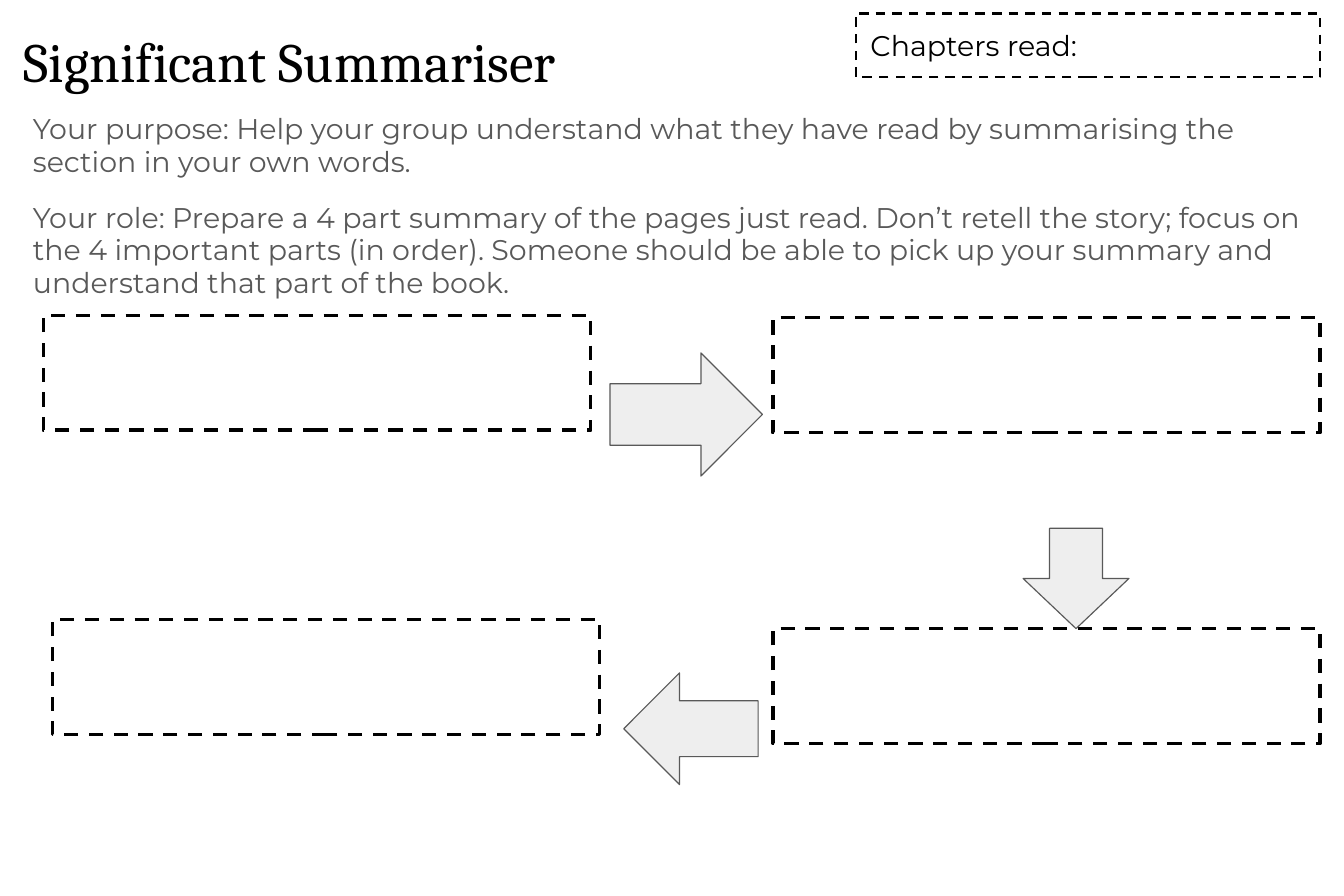
"""Build the Significant Summariser reading-group worksheet."""
from pptx import Presentation
from pptx.dml.color import RGBColor
from pptx.enum.dml import MSO_LINE
from pptx.enum.shapes import MSO_SHAPE as Preset
from pptx.enum.text import MSO_ANCHOR as Anchor, MSO_AUTO_SIZE as AutoSize, PP_ALIGN as Align
from pptx.util import Pt

COLOURS = {"ink": "000000", "grey": "595959", "arrow": "EEEEEE"}
INSET = 9.3
SUMMARY_SIZE = (346.3, 72.7)


def add_outline(preset, left, top, width, height, colour, weight):
    shape = page.shapes.add_shape(preset, Pt(left), Pt(top), Pt(width), Pt(height))
    shape.shadow.inherit = False
    shape.fill.background()
    shape.line.color.rgb = RGBColor.from_string(COLOURS[colour])
    shape.line.width = Pt(weight)
    return shape


def write_text(box, paragraphs, font, size, colour, anchor, spacing=1.0, gap=0):
    frame = box.text_frame
    frame.word_wrap = True
    frame.vertical_anchor = anchor
    frame.margin_left = frame.margin_right = Pt(INSET)
    frame.margin_top = frame.margin_bottom = Pt(INSET)
    for index, text in enumerate(paragraphs):
        para = frame.add_paragraph() if index else frame.paragraphs[0]
        para.alignment = Align.LEFT
        para.line_spacing = spacing
        para.space_before = Pt(gap if index else 0)
        span = para.add_run()
        span.text = text
        span.font.name = font
        span.font.size = Pt(size)
        span.font.color.rgb = RGBColor.from_string(COLOURS[colour])


deck = Presentation()
deck.slide_width, deck.slide_height = Pt(850.3), Pt(566.6)
page = deck.slides.add_slide(deck.slide_layouts[6])

title = page.shapes.add_textbox(Pt(5.8), Pt(6.5), Pt(792.7), Pt(63.4))
write_text(title, ["Significant Summariser"], "Cambria", 35, "ink", Anchor.MIDDLE)

instructions = page.shapes.add_textbox(Pt(11.5), Pt(62.6), Pt(834.5), Pt(118.8))
write_text(instructions, [
    "Your purpose: Help your group understand what they have read by "
    "summarising the section in your own words.",
    "Your role: Prepare a 4 part summary of the pages just read. Don’t retell "
    "the story; focus on the 4 important parts (in order). Someone should be "
    "able to pick up your summary and understand that part of the book.",
], "Montserrat", 18, "grey", Anchor.TOP, spacing=0.95, gap=15)

chapters = add_outline(Preset.RECTANGLE, 541.4, 8.6, 293.8, 40.3, "ink", 1.5)
chapters.line.dash_style = MSO_LINE.DASH
write_text(chapters, ["Chapters read:"], "Montserrat", 18, "ink", Anchor.TOP)
chapters.text_frame.auto_size = AutoSize.SHAPE_TO_FIT_TEXT

for left, top in [(27.4, 199.4), (488.9, 200.9), (488.9, 397.4), (33.1, 391.7)]:
    summary = add_outline(Preset.RECTANGLE, left, top, *SUMMARY_SIZE, "ink", 2.25)
    summary.line.dash_style = MSO_LINE.DASH

for preset, left, top, width, height in [
    (Preset.RIGHT_ARROW, 385.9, 223.2, 96.5, 77.8),
    (Preset.DOWN_ARROW, 647.3, 334.1, 67, 63.4),
    (Preset.LEFT_ARROW, 394.6, 425.5, 85, 70.6),
]:
    arrow = add_outline(preset, left, top, width, height, "grey", 0.75)
    arrow.fill.solid()
    arrow.fill.fore_color.rgb = RGBColor.from_string(COLOURS["arrow"])

deck.save("out.pptx")
